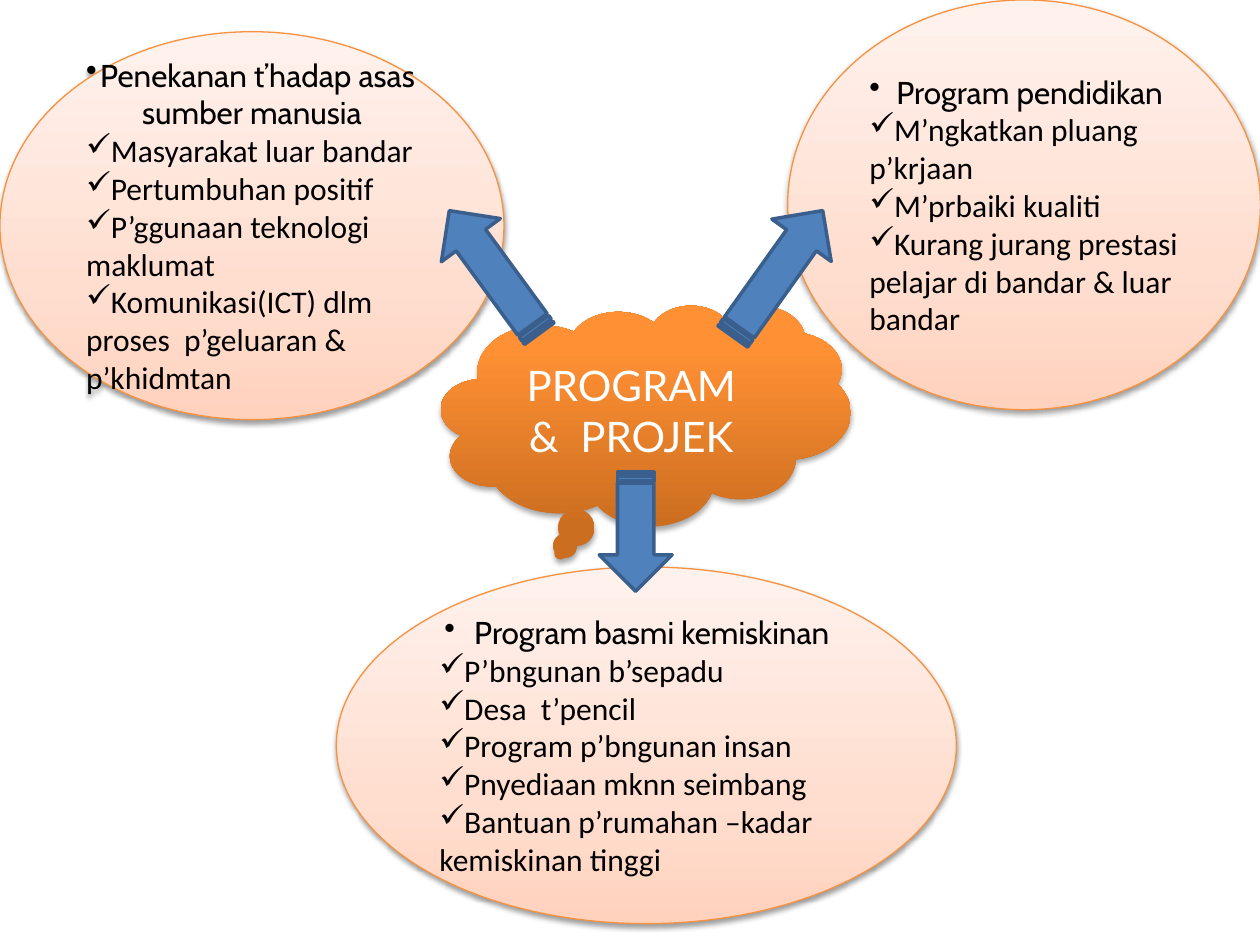
from dataclasses import dataclass

from lxml import etree
from pptx import Presentation
from pptx.dml.color import RGBColor
from pptx.enum.shapes import MSO_SHAPE
from pptx.enum.text import MSO_ANCHOR, PP_ALIGN
from pptx.oxml.ns import qn
from pptx.util import Cm, Pt

CLOUD = MSO_SHAPE.CLOUD_CALLOUT
OVAL = MSO_SHAPE.OVAL
STRIPED_ARROW = MSO_SHAPE.STRIPED_RIGHT_ARROW
MIDDLE = MSO_ANCHOR.MIDDLE
CENTER = PP_ALIGN.CENTER
LEFT = PP_ALIGN.LEFT
BLANK_LAYOUT = 6


@dataclass(frozen=True)
class Theme:
    cloud_stops: tuple = ((0, "CC6E20"), (80, "FF9034"), (100, "FF9136"))
    oval_stops: tuple = ((0, "FFD2BD"), (35, "FFDED0"), (100, "FFF2ED"))
    oval_line: str = "F69240"
    arrow_fill: str = "4F81BD"
    arrow_line: str = "3A5F8C"
    cloud_text: str = "FFFFFF"
    oval_text: str = "000000"
    shadow: str = "000000"
    cloud_font: str = "Lato"
    heading_font: str = "Cabin"
    item_font: str = "Calibri"
    cloud_size: int = 24
    oval_size: int = 18


THEME = Theme()

OVALS = [
    ((15.88, 0, 9.53, 8.26), "Program pendidikan", [
        "M’ngkatkan pluang p’krjaan",
        "M’prbaiki kualiti",
        "Kurang jurang prestasi pelajar di bandar & luar bandar",
    ]),
    ((6.78, 11.43, 12.5, 7.19), "Program basmi kemiskinan", [
        "P’bngunan b’sepadu",
        "Desa  t’pencil",
        "Program p’bngunan insan",
        "Pnyediaan mknn seimbang",
        "Bantuan p’rumahan –kadar kemiskinan tinggi",
    ]),
    ((0, 0.64, 10.16, 7.82), "Penekanan t’hadap asas sumber manusia", [
        "Masyarakat luar bandar",
        "Pertumbuhan positif",
        "P’ggunaan teknologi maklumat",
        "Komunikasi(ICT) dlm proses  p’geluaran & p’khidmtan",
    ]),
]

ARROWS = [
    ((14.12, 4.78, 3.12, 1.47), 305.5),
    ((8.43, 4.75, 3.07, 1.47), 233.8),
    ((11.61, 9.98, 2.41, 1.47), 90),
]


def add_child(parent, tag, **attributes):
    return etree.SubElement(parent, qn(tag), {key: str(value) for key, value in attributes.items()})


def add_shape(page, kind, box):
    shape = page.shapes.add_shape(kind, *(Cm(length) for length in box))
    shape.shadow.inherit = False
    return shape


def set_line(shape, color, width):
    shape.line.color.rgb = RGBColor.from_string(color)
    shape.line.width = Pt(width)


def set_gradient(shape, stops):
    shape.fill.gradient()
    shape.fill.gradient_angle = 90
    stop_list = shape.element.spPr.find(".//" + qn("a:gsLst"))
    for stop in list(stop_list):
        stop_list.remove(stop)
    for position, color in stops:
        stop = add_child(stop_list, "a:gs", pos=position * 1000)
        add_child(stop, "a:srgbClr", val=color)


def set_shadow(shape, distance, opacity):
    effects = shape.element.spPr.find(qn("a:effectLst"))
    shadow = add_child(effects, "a:outerShdw", blurRad=Pt(3.1), dist=Pt(distance),
                       dir=5400000, rotWithShape=0)
    color = add_child(shadow, "a:srgbClr", val=THEME.shadow)
    add_child(color, "a:alpha", val=opacity * 1000)


def set_text(para, text, font, size, color, align):
    para.text = text
    para.alignment = align
    para.font.name = font
    para.font.size = Pt(size)
    para.font.color.rgb = RGBColor.from_string(color)


def set_bullet(para, mark):
    properties = para._p.get_or_add_pPr()
    bullet = etree.Element(qn("a:buChar"), {"char": mark})
    properties.insert(0, bullet)


def add_cloud(page, box, text):
    cloud = add_shape(page, CLOUD, box)
    set_gradient(cloud, THEME.cloud_stops)
    cloud.line.fill.background()
    set_shadow(cloud, 1.8, 35)
    frame = cloud.text_frame
    frame.word_wrap = True
    frame.vertical_anchor = MIDDLE
    set_text(frame.paragraphs[0], text, THEME.cloud_font, THEME.cloud_size,
             THEME.cloud_text, CENTER)


def add_oval(page, box, heading, items):
    oval = add_shape(page, OVAL, box)
    set_gradient(oval, THEME.oval_stops)
    set_line(oval, THEME.oval_line, 0.75)
    set_shadow(oval, 1.6, 38)
    frame = oval.text_frame
    frame.word_wrap = True
    frame.vertical_anchor = MIDDLE
    para = frame.paragraphs[0]
    set_text(para, heading, THEME.heading_font, THEME.oval_size, THEME.oval_text, CENTER)
    set_bullet(para, "•")
    for item in items:
        para = frame.add_paragraph()
        set_text(para, item, THEME.item_font, THEME.oval_size, THEME.oval_text, LEFT)
        set_bullet(para, "✓")


def add_arrow(page, box, rotation):
    arrow = add_shape(page, STRIPED_ARROW, box)
    arrow.rotation = rotation
    arrow.fill.solid()
    arrow.fill.fore_color.rgb = RGBColor.from_string(THEME.arrow_fill)
    set_line(arrow, THEME.arrow_line, 2)


def main():
    deck = Presentation()
    deck.slide_width, deck.slide_height = Cm(25.4), Cm(19.05)
    page = deck.slides.add_slide(deck.slide_layouts[BLANK_LAYOUT])
    add_cloud(page, (8.89, 6.15, 8.26, 4.45), "PROGRAM &  PROJEK")
    for box, heading, items in OVALS:
        add_oval(page, box, heading, items)
    for box, rotation in ARROWS:
        add_arrow(page, box, rotation)
    deck.save("out.pptx")


if __name__ == "__main__":
    main()
